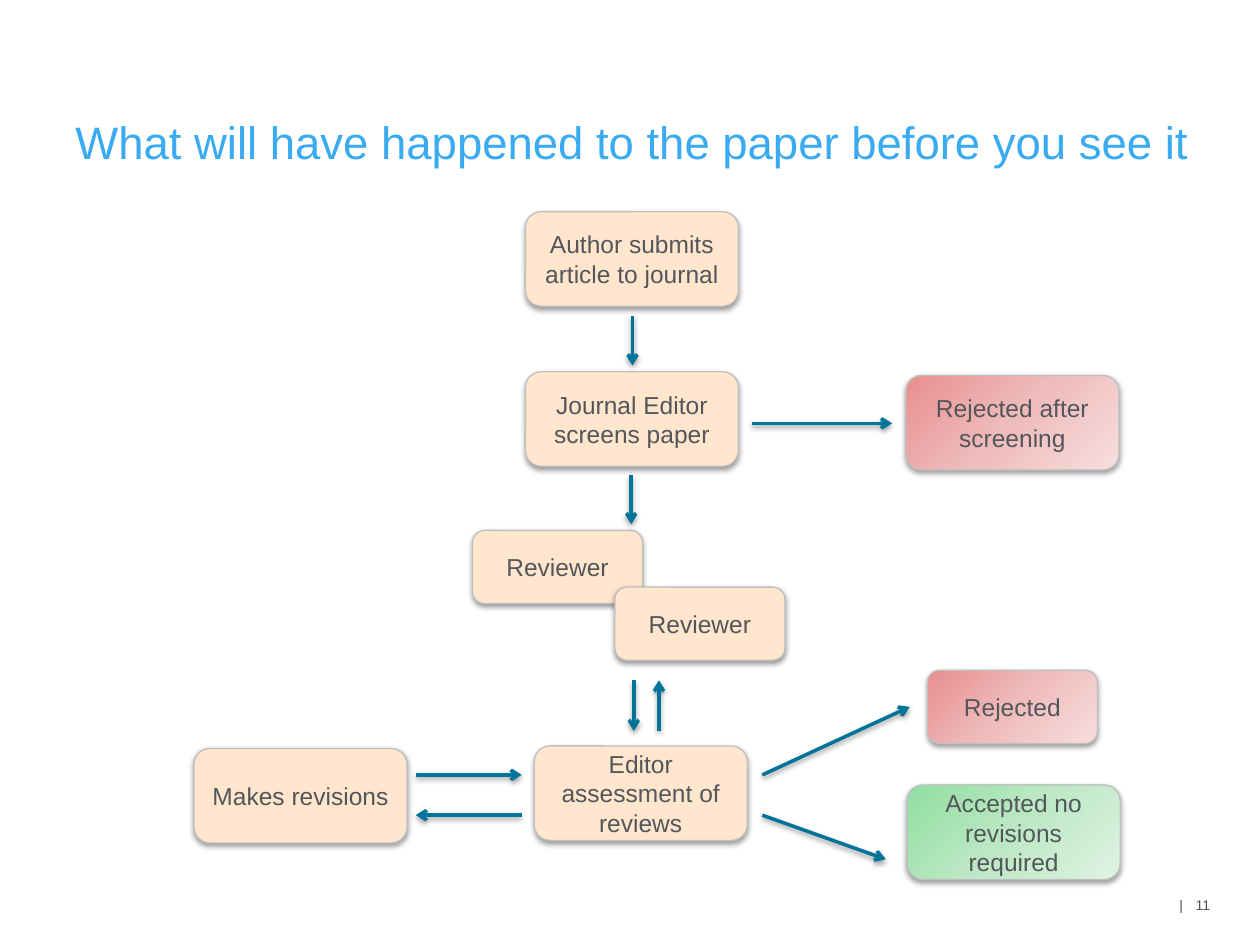
from copy import deepcopy

from lxml.etree import SubElement
from pptx import Presentation
from pptx.dml.color import RGBColor
from pptx.enum.shapes import MSO_CONNECTOR, MSO_SHAPE
from pptx.enum.text import MSO_ANCHOR as Anchor, PP_ALIGN as Align
from pptx.oxml.ns import qn
from pptx.util import Pt

PX = 9144  # EMU per px, 100 px to the inch

TITLE_BLUE = RGBColor(0x3A, 0xAB, 0xF0)
ARROW_BLUE = RGBColor(0x00, 0x73, 0x98)
TEXT_GREY = RGBColor(0x53, 0x56, 0x5A)
FOOTER_GREY = RGBColor(0x50, 0x50, 0x50)
BORDER_GREY = RGBColor(0xBF, 0xBF, 0xBF)
PEACH = [RGBColor(0xFF, 0xE6, 0xCC)]
REDS = [RGBColor(0xE9, 0x8F, 0x8F), RGBColor(0xEF, 0xBC, 0xBC), RGBColor(0xF7, 0xDE, 0xDE)]
GREENS = [RGBColor(0x91, 0xDE, 0xA0), RGBColor(0xBD, 0xE8, 0xC5), RGBColor(0xDF, 0xF3, 0xE3)]

LARGE, SMALL = (169, 75), (135, 58)

# Steps: text, left, top, size, fill colours; relative to the chart box
STEPS = [
    ("Author submits article to journal", 263, 0, LARGE, PEACH),
    ("Accepted no revisions required", 566, 455, LARGE, GREENS),
    ("Rejected after screening", 565, 130, LARGE, REDS),
    ("Journal Editor screens paper", 263, 127, LARGE, PEACH),
    ("Reviewer", 221, 253, SMALL, PEACH),
    ("Reviewer", 334, 298, SMALL, PEACH),
    ("Rejected", 582, 364, SMALL, REDS),
    ("Makes revisions", 0, 426, LARGE, PEACH),
    ("Editor assessment of reviews", 270, 424, LARGE, PEACH),
]

# Arrows: from x, y to x, y; relative to the chart box
ARROWS = [
    (348, 83, 348, 122),   # submission to screening
    (347, 209, 347, 248),  # screening to reviewers
    (349, 372, 349, 412),  # reviewers to assessment
    (369, 412, 369, 372),  # assessment back to reviewers
    (451, 447, 568, 393),  # assessment to rejected
    (451, 479, 549, 514),  # assessment to accepted
    (443, 168, 554, 168),  # screening to rejected
    (176, 447, 260, 447),  # revisions to assessment
    (260, 479, 176, 479),  # assessment to revisions
]


def px(*lengths):
    return [length * PX for length in lengths]


def set_values(target, values):
    for name, value in values.items():
        setattr(target, name, value)


def write(shape, text, size, color, align):
    set_values(shape.text_frame, {"word_wrap": True, "vertical_anchor": Anchor.MIDDLE})
    paragraph = shape.text_frame.paragraphs[0]
    paragraph.alignment = align
    run = paragraph.add_run()
    run.text = text
    set_values(run.font, {"name": "Arial", "size": Pt(size)})
    run.font.color.rgb = color
    return paragraph


def add_soft_shadow(properties):
    effects = SubElement(properties, qn("a:effectLst"))
    shadow = SubElement(effects, qn("a:outerShdw"), blurRad="40000", dist="20000",
                        dir="5400000", rotWithShape="0")
    black = SubElement(shadow, qn("a:srgbClr"), val="000000")
    SubElement(black, qn("a:alpha"), val="38000")


def fill_with(shape, colors):
    if len(colors) == 1:
        shape.fill.solid()
        shape.fill.fore_color.rgb = colors[0]
        return
    shape.fill.gradient()
    shape.fill.gradient_angle = 315  # counter-clockwise: runs down to the right
    stop_list = next(shape._element.spPr.iter(qn("a:gsLst")))
    stop_list.insert(1, deepcopy(stop_list[0]))
    for index, (stop, color) in enumerate(zip(shape.fill.gradient_stops, colors)):
        stop.position = index / (len(colors) - 1)
        stop.color.rgb = color


def add_step(slide, text, left, top, size, colors):
    step = slide.shapes.add_shape(MSO_SHAPE.ROUNDED_RECTANGLE, *px(left, top, *size))
    fill_with(step, colors)
    step.line.color.rgb = BORDER_GREY
    step.line.width = Pt(0.75)
    add_soft_shadow(step._element.spPr)
    write(step, text, 14, TEXT_GREY, Align.CENTER)


def add_arrow(slide, *ends):
    arrow = slide.shapes.add_connector(MSO_CONNECTOR.STRAIGHT, *px(*ends))
    arrow.line.color.rgb = ARROW_BLUE
    arrow.line.width = Pt(2)
    SubElement(arrow.line._get_or_add_ln(), qn("a:tailEnd"), type="arrow")
    add_soft_shadow(arrow._element.spPr)


def add_flow_chart(slide, left, top):
    for text, x, y, size, colors in STEPS:
        add_step(slide, text, left + x, top + y, size, colors)
    for x1, y1, x2, y2 in ARROWS:
        add_arrow(slide, left + x1, top + y1, left + x2, top + y2)


def add_title(slide, left, top, width, height):
    title = slide.shapes.add_textbox(*px(left, top, width, height))
    write(title, "What will have happened to the paper before you see it",
          26, TITLE_BLUE, Align.LEFT)


def add_page_number(slide, left, top, width, height):
    footer = slide.shapes.add_textbox(*px(left, top, width, height))
    set_values(footer.text_frame, {"margin_left": 30 * PX, "margin_right": 0})
    paragraph = write(footer, "|\t11", 8, FOOTER_GREY, Align.LEFT)
    # Tab stop sets the gap between bar and number
    tabs = SubElement(paragraph._p.get_or_add_pPr(), qn("a:tabLst"))
    SubElement(tabs, qn("a:tab"), pos=str(13 * PX), algn="l")


def main():
    deck = Presentation()
    set_values(deck, {"slide_width": 1000 * PX, "slide_height": 750 * PX})
    slide = deck.slides.add_slide(deck.slide_layouts[6])
    add_page_number(slide, 906, 700, 64, 37)
    add_title(slide, 50, 91, 920, 42)
    add_flow_chart(slide, 154, 168)
    deck.save("out.pptx")


if __name__ == "__main__":
    main()
